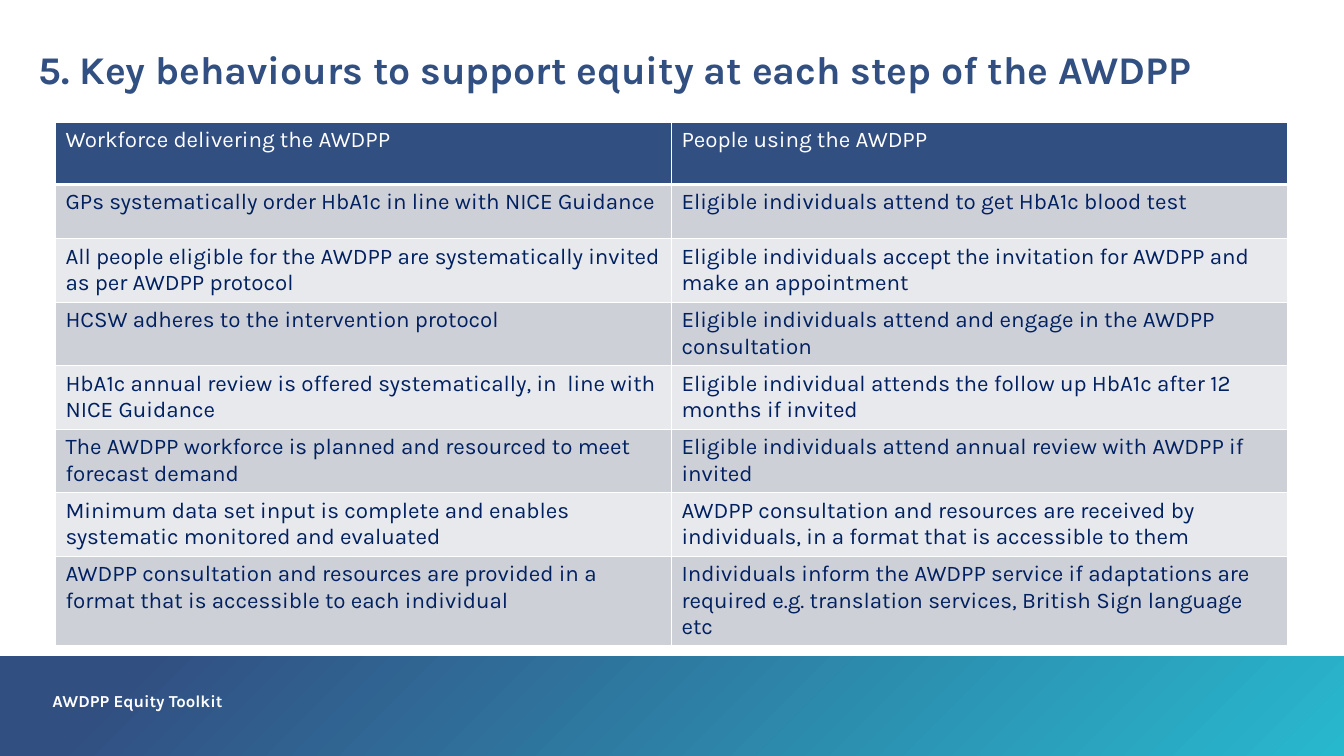
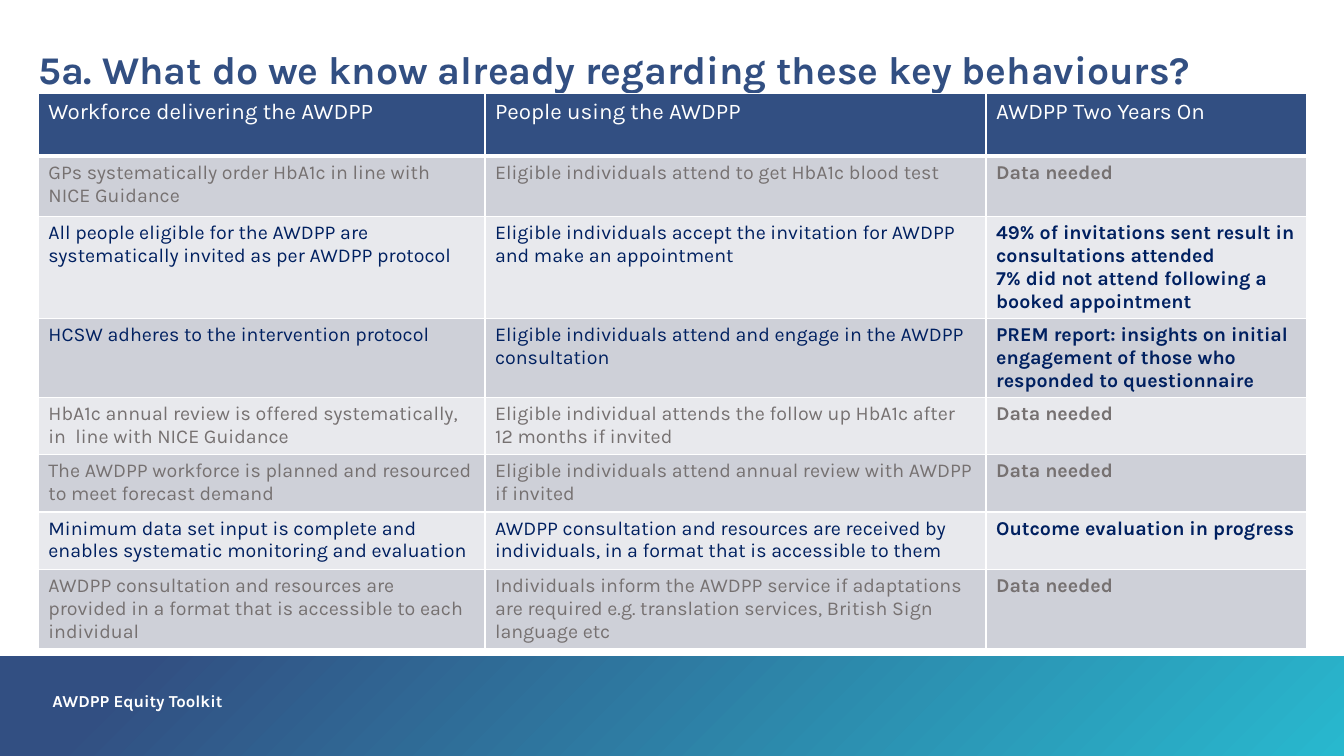
"""Build two table slides on key behaviours for the AWDPP Equity Toolkit."""
from lxml import etree
from pptx import Presentation
from pptx.dml.color import RGBColor
from pptx.enum.shapes import MSO_SHAPE
from pptx.enum.text import MSO_ANCHOR, MSO_AUTO_SIZE, PP_ALIGN
from pptx.oxml.ns import qn
from pptx.util import Inches, Pt

RECTANGLE = MSO_SHAPE.RECTANGLE
TOP = MSO_ANCHOR.TOP
NO_AUTOFIT = MSO_AUTO_SIZE.NONE
LEFT = PP_ALIGN.LEFT

FONT = "Karla"
BLUE, TEAL, NAVY, GREY, WHITE = "324F82", "28B8CE", "002060", "767171", "FFFFFF"
BANDS = ["CED0D8", "E8E9ED"]
FOOTER = "AWDPP Equity Toolkit"
PENDING = "Data needed"

HEADINGS = ["Workforce delivering the AWDPP", "People using the AWDPP"]
BEHAVIOURS = [
    ["GPs systematically order HbA1c in line with NICE Guidance",
     "Eligible individuals attend to get HbA1c blood test"],
    ["All people eligible for the AWDPP are systematically invited as per AWDPP protocol",
     "Eligible individuals accept the invitation for AWDPP and make an appointment"],
    ["HCSW adheres to the intervention protocol",
     "Eligible individuals attend and engage in the AWDPP consultation"],
    ["HbA1c annual review is offered systematically, in  line with NICE Guidance",
     "Eligible individual attends the follow up HbA1c after 12 months if invited"],
    ["The AWDPP workforce is planned and resourced to meet forecast demand",
     "Eligible individuals attend annual review with AWDPP if invited"],
    ["Minimum data set input is complete and enables systematic monitored and evaluated",
     "AWDPP consultation and resources are received by individuals, "
     "in a format that is accessible to them"],
    ["AWDPP consultation and resources are provided in a format "
     "that is accessible to each individual",
     "Individuals inform the AWDPP service if adaptations are required "
     "e.g. translation services, British Sign language etc"],
]
FINDINGS = [
    PENDING,
    "49% of invitations sent result in consultations attended\n"
    "7% did not attend following a booked appointment",
    "PREM report: insights on initial engagement of those who responded to questionnaire",
    PENDING,
    PENDING,
    "Outcome evaluation in progress",
    PENDING,
]
REVIEWED = [
    [work.replace("monitored and evaluated", "monitoring and evaluation"), people, finding]
    for (work, people), finding in zip(BEHAVIOURS, FINDINGS)
]

PAGES = [
    {"title": "5. Key behaviours to support equity at each step of the AWDPP",
     "rows": [HEADINGS] + BEHAVIOURS, "size": 16, "left": 0.55, "top": 1.21,
     "widths": [6.11, 6.11],
     "heights": [0.62, 0.54] + [0.63] * 5 + [0.89]},
    {"title": "5a. What do we know already regarding these key behaviours?",
     "rows": [HEADINGS + ["AWDPP Two Years On"]] + REVIEWED, "size": 14,
     "left": 0.38, "top": 0.93,
     "widths": [4.43, 4.97, 3.18],
     "heights": [0.62, 0.6, 1.01, 0.77, 0.57, 0.57, 0.57, 0.77]},
]


def rgb(value):
    return RGBColor.from_string(value)


def write(frame, text, size, color, bold):
    frame.text = text
    for para in frame.paragraphs:
        para.alignment = LEFT
        for span in para.runs:
            span.font.name = FONT
            span.font.size = Pt(size)
            span.font.bold = bold
            span.font.color.rgb = rgb(color)


deck = Presentation()
deck.slide_width = Inches(13.33)
deck.slide_height = Inches(7.5)
layout = deck.slide_layouts[1]

for number, content in enumerate(PAGES):
    page = deck.slides.add_slide(layout)

    if number == 0:
        band = page.shapes.add_shape(
            RECTANGLE, 0, Inches(6.51), deck.slide_width, Inches(0.99))
        band.shadow.inherit = False
        band.line.fill.background()
        band.fill.gradient()
        band.fill.gradient_angle = 315
        for stop, position, color in zip(band.fill.gradient_stops, [0.1, 1], [BLUE, TEAL]):
            stop.position = position
            stop.color.rgb = rgb(color)
        layout.shapes.element.insert(2, band.element)

    title, footer = page.shapes.title, page.placeholders[1]
    for box, text, size, color, place in [
        (title, content["title"], 28, BLUE, (0.38, 0.5, 11.77, 0.43)),
        (footer, FOOTER, 12, WHITE, (0.52, 6.87, 7.03, 0.18)),
    ]:
        box.left, box.top, box.width, box.height = map(Inches, place)
        frame = box.text_frame
        frame.margin_left = frame.margin_top = frame.margin_right = frame.margin_bottom = 0
        frame.vertical_anchor = TOP
        frame.auto_size = NO_AUTOFIT
        frame.word_wrap = True
        write(frame, text, size, color, True)
        para = frame.paragraphs[0]
        para.line_spacing = 0.9
        para.space_before = Pt(0)
        properties = para._p.get_or_add_pPr()
        properties.set("marL", "0")
        properties.set("indent", "0")
        etree.SubElement(properties, qn("a:buNone"))

    rows, widths, heights = content["rows"], content["widths"], content["heights"]
    table = page.shapes.add_table(
        len(rows), len(widths), Inches(content["left"]), Inches(content["top"]),
        Inches(sum(widths)), Inches(sum(heights))).table
    for column, width in zip(table.columns, widths):
        column.width = Inches(width)
    for row, height in zip(table.rows, heights):
        row.height = Inches(height)

    for row_number, texts in enumerate(rows):
        heading = row_number == 0
        for column_number, text in enumerate(texts):
            cell = table.cell(row_number, column_number)
            if heading:
                size, color, fill = 16, WHITE, BLUE
            else:
                size, fill = content["size"], BANDS[(row_number - 1) % 2]
                color = GREY if PENDING in texts else NAVY
            write(cell.text_frame, text, size, color, not heading and column_number == 2)

            properties = cell._tc.get_or_add_tcPr()
            for side in ["L", "R", "T", "B"]:
                thick = (heading and side == "B") or (row_number == 1 and side == "T")
                border = etree.SubElement(
                    properties, qn("a:ln" + side), w=str(Pt(3 if thick else 1)))
                solid = etree.SubElement(border, qn("a:solidFill"))
                etree.SubElement(solid, qn("a:srgbClr"), val=WHITE)
            cell.fill.solid()
            cell.fill.fore_color.rgb = rgb(fill)

deck.save("out.pptx")
